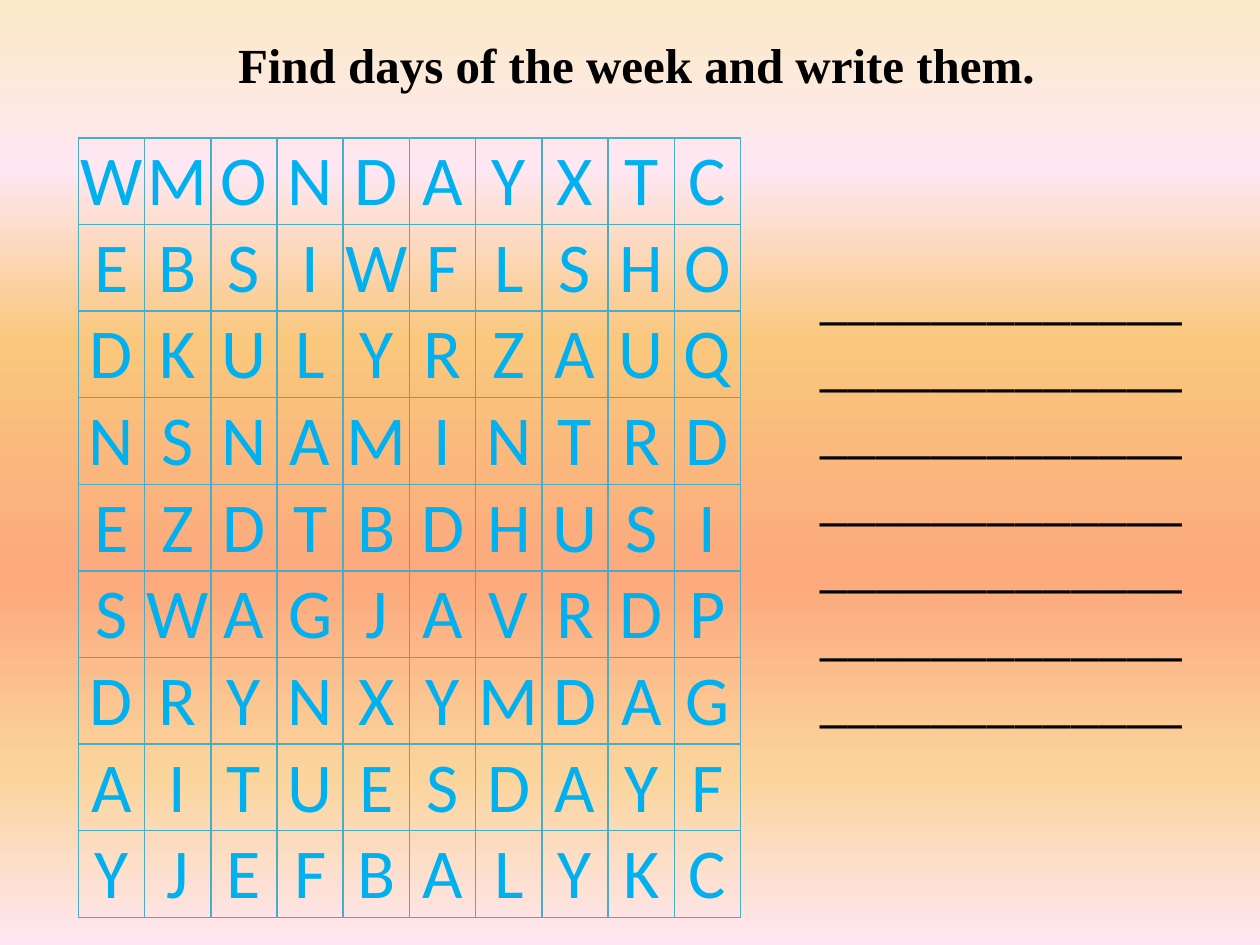
from lxml.etree import SubElement
from pptx import Presentation
from pptx.dml.color import RGBColor
from pptx.enum.text import MSO_ANCHOR, MSO_AUTO_SIZE, PP_ALIGN
from pptx.oxml.ns import qn
from pptx.util import Pt

SKY = [(0, "FBEAC7"), (18, "FEE7F2"), (36, "FAC77D"),
       (61, "FBA97D"), (82, "FBD49C"), (100, "FEE7F2")]
LETTERS = ["WMONDAYXTC", "EBSIWFLSHO", "DKULYRZAUQ",
           "NSNAMINTRD", "EZDTBDHUSI", "SWAGJAVRDP",
           "DRYNXYMDAG", "AITUESDAYF", "YJEFBALYKC"]
DAYS, BLANKS_PER_DAY = 7, 13


def color(value):
    return RGBColor.from_string(value)


class Worksheet:
    """Holds the style and the current slide."""
    title_font, body_font = "Times New Roman", "Calibri"
    ink, letter, grid = "000000", "00B0F0", "4BACC6"

    def __init__(self, prs):
        self.s = prs.slides.add_slide(prs.slide_layouts[5])

    def background(self, stops):
        fill = self.s.background.fill
        fill.gradient()
        fill.gradient_angle = 270  # top to bottom
        stop_list = next(self.s.element.iter(qn("a:gsLst")))
        for old in list(stop_list):
            stop_list.remove(old)
        for percent, value in stops:
            stop = SubElement(stop_list, qn("a:gs"), pos=str(percent * 1000))
            SubElement(stop, qn("a:srgbClr"), val=value)

    def format(self, p, font, size, value, bold=False):
        for r in p.runs:
            r.font.name, r.font.size, r.font.bold = font, Pt(size), bold
            r.font.color.rgb = color(value)

    def place(self, sp, left, top, width, height):
        sp.left, sp.top = Pt(left), Pt(top)
        sp.width, sp.height = Pt(width), Pt(height)

    def title(self, text, *box):
        sp = self.s.shapes.title
        self.place(sp, *box)
        tf = sp.text_frame
        tf.text = text
        tf.vertical_anchor = MSO_ANCHOR.MIDDLE
        p = tf.paragraphs[0]
        p.alignment = PP_ALIGN.CENTER
        self.format(p, self.title_font, 28, self.ink, bold=True)

    def borders(self, cell):
        props = cell._tc.get_or_add_tcPr()
        for i, side in enumerate(("lnL", "lnR", "lnT", "lnB")):
            ln = SubElement(props, qn(f"a:{side}"), w=str(Pt(1)))
            fill = SubElement(ln, qn("a:solidFill"))
            SubElement(fill, qn("a:srgbClr"), val=self.grid)
            props.insert(i, ln)  # borders come before the fill

    def letter_grid(self, rows, left, top, width, height):
        table = self.s.shapes.add_table(
            len(rows), len(rows[0]), Pt(left), Pt(top), Pt(width), Pt(height)).table
        table.first_row = table.horz_banding = False
        for i, row in enumerate(rows):
            for j, char in enumerate(row):
                cell = table.cell(i, j)
                cell.text = char
                cell.fill.background()
                cell.vertical_anchor = MSO_ANCHOR.BOTTOM
                cell.margin_left = cell.margin_right = cell.margin_top = Pt(0.75)
                cell.margin_bottom = 0
                p = cell.text_frame.paragraphs[0]
                p.alignment = PP_ALIGN.CENTER
                self.format(p, self.body_font, 40, self.letter)
                self.borders(cell)

    def answer_lines(self, text, *box):
        sp = self.s.shapes.add_textbox(*map(Pt, box))
        tf = sp.text_frame
        tf.word_wrap = True
        tf.auto_size = MSO_AUTO_SIZE.SHAPE_TO_FIT_TEXT
        tf.text = text
        self.format(tf.paragraphs[0], self.body_font, 32, self.ink)


def main():
    prs = Presentation()
    prs.slide_width, prs.slide_height = Pt(720), Pt(540)
    sheet = Worksheet(prs)
    sheet.background(SKY)

    # Heading
    sheet.title("Find days of the week and write them.", 39.6, 0, 648, 73.5)

    # Word search
    sheet.letter_grid(LETTERS, 44.75, 78.75, 378.5, 437)

    # One wrapped run of blanks, a line for each day
    sheet.answer_lines("_" * DAYS * BLANKS_PER_DAY, 461.25, 146.25, 225.25, 278.75)

    prs.save("out.pptx")


if __name__ == "__main__":
    main()
